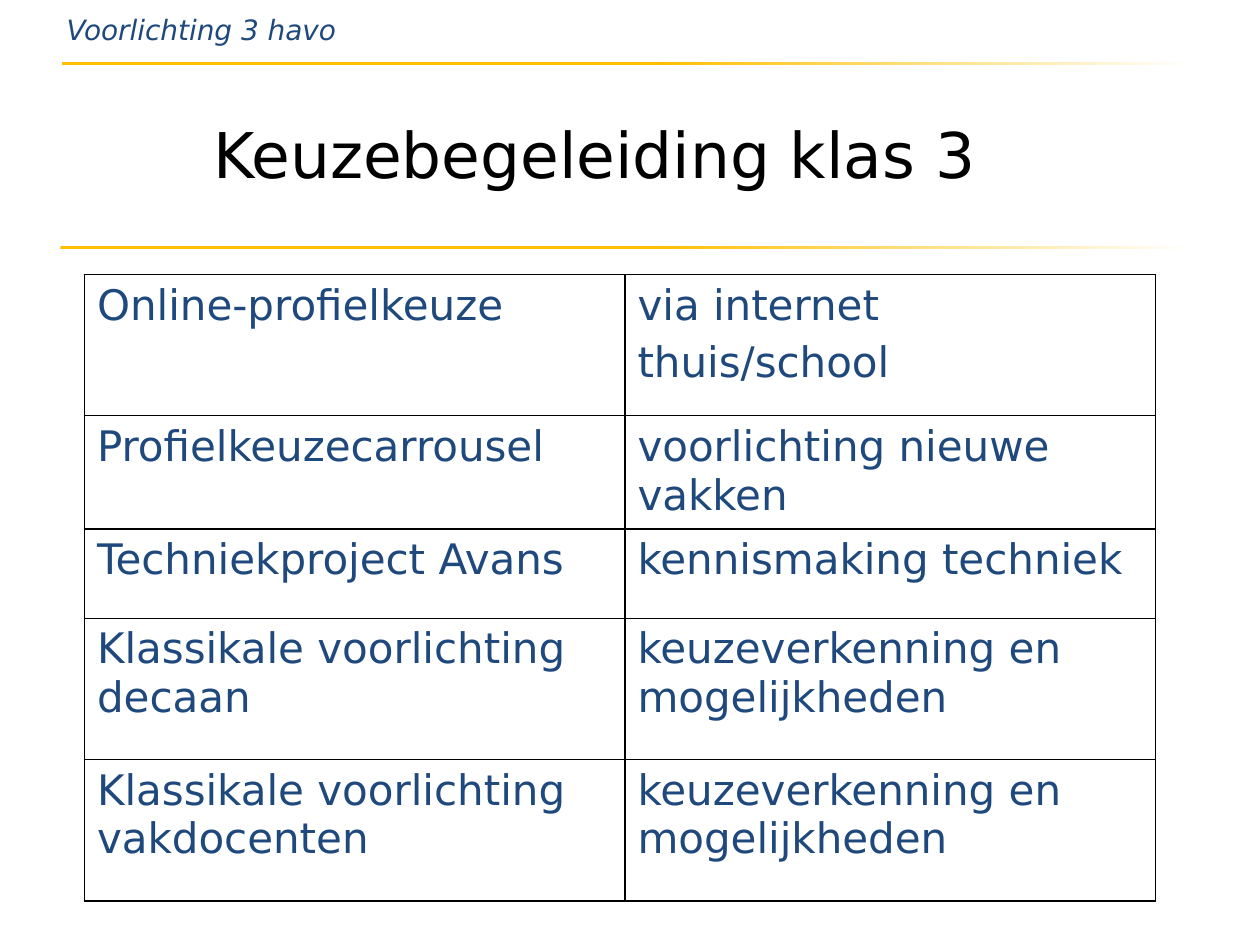
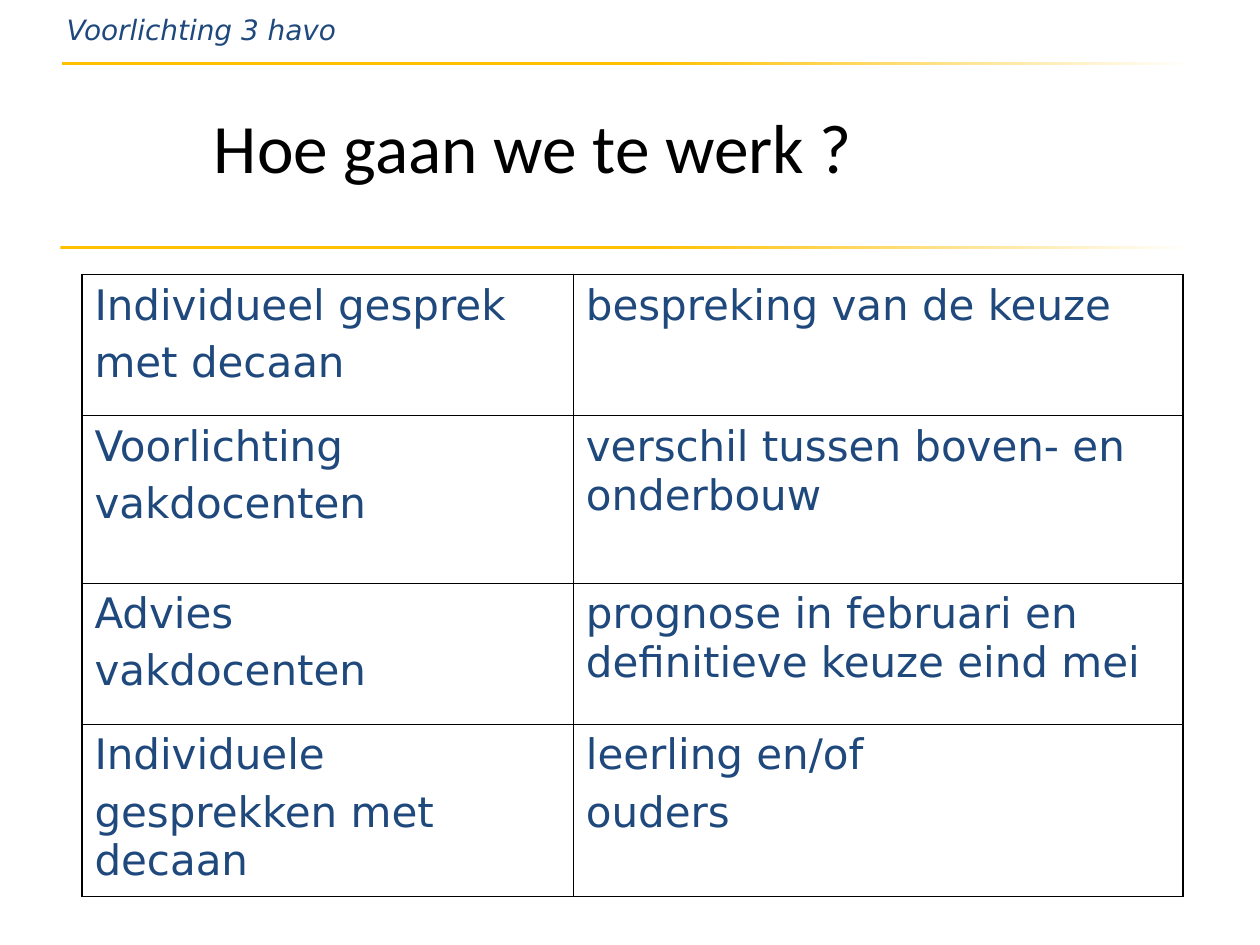
from dataclasses import dataclass
from typing import Any

from lxml import etree
from pptx import Presentation
from pptx import util as u
from pptx.dml import color
from pptx.enum import shapes, text
from pptx.oxml import ns

COLORS = {"navy": "1F497D", "gold": "FFC000", "white": "FFFFFF", "black": "000000"}
BODY_FONT = "DejaVu Sans"
HEADER_TEXT = "Voorlichting 3 havo"
HEADER_FORMAT = {"name": BODY_FONT, "size": u.Pt(16), "italic": True}
CELL_FORMAT = {"name": BODY_FONT, "size": u.Pt(24)}
PARAGRAPH_GAP = u.Pt(4.8)
BORDER_WIDTH = u.Pt(1)


@dataclass(frozen=True)
class Box:
    left: float
    top: float
    width: float
    height: float

    def lengths(self) -> list[int]:
        return [u.Inches(n) for n in (self.left, self.top, self.width, self.height)]


@dataclass(frozen=True)
class Title:
    wording: str
    box: Box
    font: str
    size: float


@dataclass(frozen=True)
class Grid:
    """A table; a line break inside a cell starts a new paragraph."""
    left: float
    top: float
    columns: tuple[float, ...]
    rows: tuple[float, ...]
    cells: tuple[tuple[str, str], ...]


@dataclass(frozen=True)
class Page:
    title: Title
    grid: Grid


GOLD_RULES = (Box(0.48, 1.95, 9, 0.03), Box(0.49, 0.49, 9, 0.03))
HEADER_BOX = Box(0.43, 0.05, 4.25, 0.37)

PAGES = (
    Page(
        Title("Keuzebegeleiding klas 3", Box(1.22, 0.84, 7, 0.75), BODY_FONT, 36),
        Grid(0.67, 2.18, (4.29, 4.21), (1.12, 0.88, 0.71, 1.12, 1.12), (
            ("Online-profielkeuze", "via internet\nthuis/school"),
            ("Profielkeuzecarrousel", "voorlichting nieuwe vakken"),
            ("Techniekproject Avans", "kennismaking techniek"),
            ("Klassikale voorlichting decaan", "keuzeverkenning en mogelijkheden"),
            ("Klassikale voorlichting vakdocenten", "keuzeverkenning en mogelijkheden"),
        )),
    ),
    Page(
        Title("Hoe gaan we te werk ?", Box(0.67, 0.76, 7.12, 0.79), "Calibri", 39.6),
        Grid(0.65, 2.18, (3.9, 4.84), (1.12, 1.33, 1.12, 1.33), (
            ("Individueel gesprek\nmet decaan", "bespreking van de keuze"),
            ("Voorlichting\nvakdocenten", "verschil tussen boven- en onderbouw"),
            ("Advies\nvakdocenten", "prognose in februari en definitieve keuze eind mei"),
            ("Individuele\ngesprekken met decaan", "leerling en/of\nouders"),
        )),
    ),
)


def rgb(name: str) -> color.RGBColor:
    return color.RGBColor.from_string(COLORS[name])


def write(frame: Any, wording: str, font_format: dict[str, Any], color_name: str) -> None:
    frame.word_wrap = True
    frame.text = wording
    for index, paragraph in enumerate(frame.paragraphs):
        if index:
            paragraph.space_before = PARAGRAPH_GAP
        for attribute, value in font_format.items():
            setattr(paragraph.font, attribute, value)
        paragraph.font.color.rgb = rgb(color_name)


def add_gold_rule(slide: Any, box: Box) -> None:
    shape = slide.shapes.add_shape(shapes.MSO_SHAPE.RECTANGLE, *box.lengths())
    shape.shadow.inherit = False
    shape.line.fill.background()
    shape.fill.gradient()
    shape.fill.gradient_angle = 0
    for stop, position, name in zip(shape.fill.gradient_stops, (0.52, 1), ("gold", "white")):
        stop.position = position
        stop.color.rgb = rgb(name)


def add_header(slide: Any) -> None:
    for box in GOLD_RULES:
        add_gold_rule(slide, box)
    frame = slide.shapes.add_textbox(*HEADER_BOX.lengths()).text_frame
    write(frame, HEADER_TEXT, HEADER_FORMAT, "navy")
    frame.auto_size = text.MSO_AUTO_SIZE.SHAPE_TO_FIT_TEXT


def add_title(slide: Any, title: Title) -> None:
    frame = slide.shapes.add_textbox(*title.box.lengths()).text_frame
    write(frame, title.wording, {"name": title.font, "size": u.Pt(title.size)}, "black")
    frame.vertical_anchor = text.MSO_ANCHOR.MIDDLE
    frame.paragraphs[0].alignment = text.PP_ALIGN.CENTER


def add_borders(cell: Any) -> None:
    properties = cell._tc.get_or_add_tcPr()
    for side in ("lnL", "lnR", "lnT", "lnB"):
        line = etree.SubElement(properties, ns.qn(f"a:{side}"), w=str(BORDER_WIDTH))
        fill = etree.SubElement(line, ns.qn("a:solidFill"))
        etree.SubElement(fill, ns.qn("a:srgbClr"), val=COLORS["black"])


def add_grid(slide: Any, grid: Grid) -> None:
    box = Box(grid.left, grid.top, sum(grid.columns), sum(grid.rows))
    table = slide.shapes.add_table(len(grid.rows), len(grid.columns), *box.lengths()).table
    table.first_row = table.horz_banding = False
    for column, width in zip(table.columns, grid.columns):
        column.width = u.Inches(width)
    for row, height, wordings in zip(table.rows, grid.rows, grid.cells):
        row.height = u.Inches(height)
        for cell, wording in zip(row.cells, wordings):
            write(cell.text_frame, wording, CELL_FORMAT, "navy")
            add_borders(cell)
            cell.fill.background()


def main() -> None:
    presentation = Presentation()
    presentation.slide_width, presentation.slide_height = u.Inches(10), u.Inches(7.5)
    for page in PAGES:
        slide = presentation.slides.add_slide(presentation.slide_layouts[6])
        add_header(slide)
        add_title(slide, page.title)
        add_grid(slide, page.grid)
    presentation.save("out.pptx")


if __name__ == "__main__":
    main()
